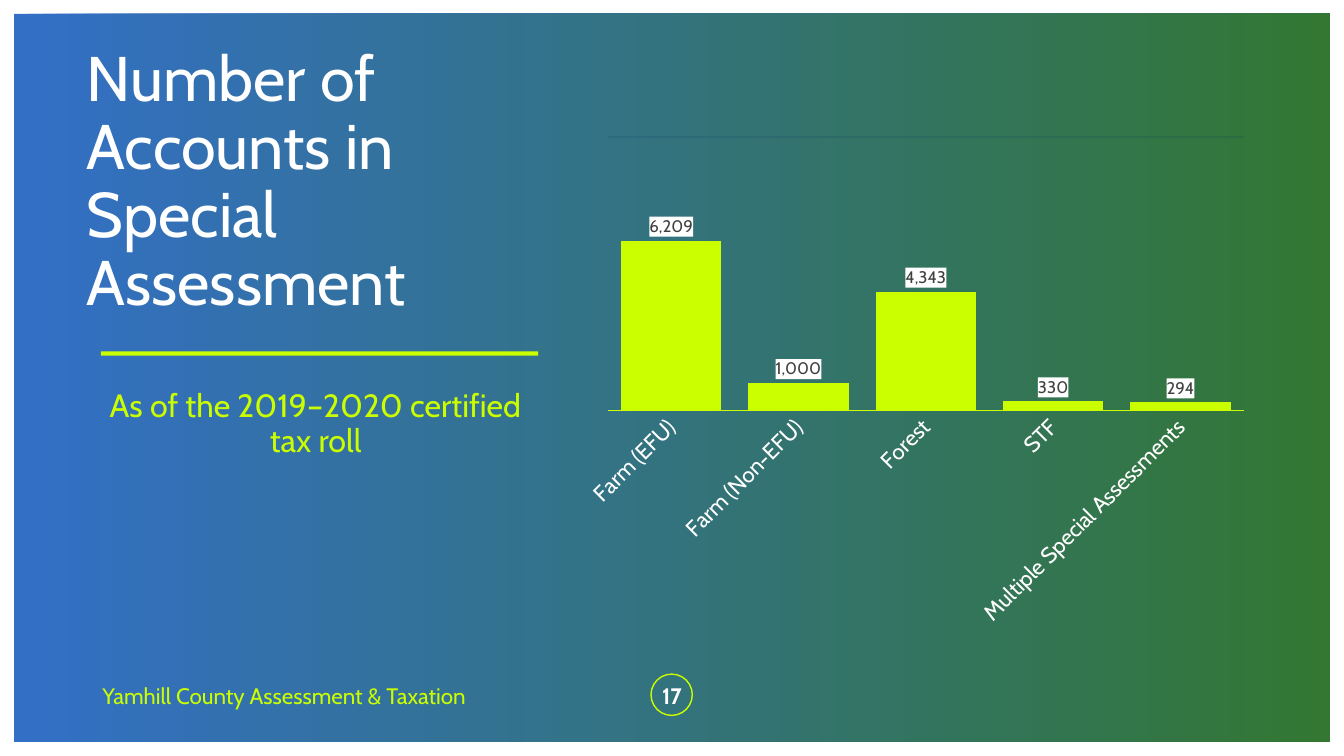
from dataclasses import dataclass

from lxml import etree
from pptx import Presentation
from pptx.chart.data import CategoryChartData
from pptx.dml.color import RGBColor
from pptx.enum.chart import XL_CHART_TYPE, XL_LABEL_POSITION, XL_TICK_MARK
from pptx.enum.shapes import MSO_SHAPE
from pptx.enum.text import MSO_ANCHOR, MSO_AUTO_SIZE, PP_ALIGN
from pptx.oxml import parse_xml
from pptx.oxml.ns import nsdecls, qn
from pptx.util import Pt

COLUMNS = XL_CHART_TYPE.COLUMN_CLUSTERED
OUTSIDE_END = XL_LABEL_POSITION.OUTSIDE_END
NO_TICK = XL_TICK_MARK.NONE
RECTANGLE, OVAL = MSO_SHAPE.RECTANGLE, MSO_SHAPE.OVAL
TOP, MIDDLE = MSO_ANCHOR.TOP, MSO_ANCHOR.MIDDLE
LEFT, CENTER = PP_ALIGN.LEFT, PP_ALIGN.CENTER
NO_AUTOFIT = MSO_AUTO_SIZE.NONE


@dataclass(frozen=True)
class Theme:
    font: str = "Cabin"
    white: str = "FFFFFF"
    lime: str = "CBFF00"
    blue: str = "004CB9"
    green: str = "005500"
    grid: str = "002E62"
    label: str = "404040"
    title_size: int = 45
    body_size: int = 23
    small_size: int = 16
    label_size: int = 12


THEME = Theme()
ACCOUNTS = {
    "Farm (EFU)": 6209,
    "Farm (Non-EFU)": 1000,
    "Forest": 4343,
    "STF": 330,
    "Multiple Special Assessments": 294,
}


def rgb(color):
    return RGBColor.from_string(color)


def style_font(font, size, color, bold=False):
    font.name = THEME.font
    font.size = Pt(size)
    font.bold = bold
    font.color.rgb = rgb(color)


def set_opacity(element, percent):
    for color in element.iter(qn("a:srgbClr")):
        alpha = etree.SubElement(color, qn("a:alpha"))
        alpha.set("val", str(percent * 1000))


def place(shape, left, top, width, height):
    shape.left, shape.top = Pt(left), Pt(top)
    shape.width, shape.height = Pt(width), Pt(height)


def add_plain_shape(page, kind, left, top, width, height):
    shape = page.shapes.add_shape(kind, Pt(left), Pt(top), Pt(width), Pt(height))
    shape.shadow.inherit = False
    shape.line.fill.background()
    shape.fill.background()
    return shape


def write(box, text, size, color, anchor=MIDDLE, align=LEFT, bold=False):
    frame = box.text_frame
    frame.text = text
    frame.word_wrap = True
    frame.auto_size = NO_AUTOFIT
    frame.vertical_anchor = anchor
    para = frame.paragraphs[0]
    para.alignment = align
    para.space_before = Pt(0)
    style_font(para.runs[0].font, size, color, bold)
    return para


def fill_placeholder(box, bounds, text, size, color, anchor, align):
    place(box, *bounds)
    frame = box.text_frame
    frame.margin_left = frame.margin_right = 0
    para = write(box, text, size, color, anchor, align)
    para.line_spacing = 0.9
    # No bullet and no hanging indent
    properties = para._p.get_or_add_pPr()
    properties.set("marL", "0")
    properties.set("indent", "0")
    properties.append(parse_xml(f"<a:buNone {nsdecls('a')}/>"))


def add_label(page, bounds, text, color, align=LEFT, bold=False):
    box = page.shapes.add_textbox(*(Pt(length) for length in bounds))
    write(box, text, THEME.small_size, color, MIDDLE, align, bold)


def add_backdrop(page):
    backdrop = add_plain_shape(page, RECTANGLE, 10, 10, 940, 520)
    backdrop.fill.gradient()
    backdrop.fill.gradient_angle = 0
    for stop, color in zip(backdrop.fill.gradient_stops, (THEME.blue, THEME.green)):
        stop.color.rgb = rgb(color)
    set_opacity(backdrop._element.spPr, 80)
    # Send behind the placeholders
    page.shapes._spTree.insert(2, backdrop._element)


def set_plot_area(chart, left, top, width, height):
    plot_area = chart._chartSpace.chart.plotArea
    for old in plot_area.findall(qn("c:layout")):
        plot_area.remove(old)
    plot_area.insert(0, parse_xml(
        f'<c:layout {nsdecls("c")}><c:manualLayout><c:layoutTarget val="inner"/>'
        '<c:xMode val="edge"/><c:yMode val="edge"/>'
        f'<c:x val="{left}"/><c:y val="{top}"/><c:w val="{width}"/><c:h val="{height}"/>'
        '</c:manualLayout></c:layout>'))


def style_axes(chart):
    categories = chart.category_axis
    categories.major_tick_mark = categories.minor_tick_mark = NO_TICK
    categories.format.line.color.rgb = rgb(THEME.lime)
    categories.format.line.width = Pt(1)
    style_font(categories.tick_labels.font, THEME.small_size, THEME.white)
    # Slant the category names upwards
    text_body = categories._element.find(qn("c:txPr")).find(qn("a:bodyPr"))
    text_body.set("rot", "-2700000")
    text_body.set("vert", "horz")

    values = chart.value_axis
    values.visible = False
    values.minimum_scale, values.maximum_scale = 0, 10000
    values.major_unit = 10000
    values.has_major_gridlines = True
    grid = values.major_gridlines.format.line
    grid.color.rgb = rgb(THEME.grid)
    grid.width = Pt(0.75)
    set_opacity(values._element.find(qn("c:majorGridlines")), 20)


def style_columns(plot):
    plot.gap_width, plot.overlap = 27, 5
    plot.vary_by_categories = False
    fill = plot.series[0].format.fill
    fill.solid()
    fill.fore_color.rgb = rgb(THEME.lime)
    plot.has_data_labels = True
    labels = plot.data_labels
    labels.show_value = True
    labels.position = OUTSIDE_END
    labels.number_format = "#,##0"
    labels.number_format_is_linked = False
    style_font(labels.font, THEME.label_size, THEME.label)
    # White plate behind each value
    labels._element.find(qn("c:txPr")).addprevious(parse_xml(
        f'<c:spPr {nsdecls("c", "a")}><a:solidFill><a:srgbClr val="{THEME.white}"/>'
        '</a:solidFill><a:ln><a:noFill/></a:ln></c:spPr>'))


def add_accounts_chart(page):
    data = CategoryChartData(number_format="#,##0")
    data.categories = list(ACCOUNTS)
    data.add_series("Series 1", list(ACCOUNTS.values()))
    chart = page.shapes.add_chart(
        COLUMNS, Pt(409.5), Pt(90.5), Pt(489), Pt(368.5), data).chart
    chart.has_legend = chart.has_title = False
    chart.font.name, chart.font.size = THEME.font, Pt(10)
    set_plot_area(chart, 0.05, 0.02, 0.93, 0.53)
    style_axes(chart)
    style_columns(chart.plots[0])


def main():
    deck = Presentation()
    deck.slide_width, deck.slide_height = Pt(960), Pt(540)
    page = deck.slides.add_slide(deck.slide_layouts[1])
    add_backdrop(page)

    # Title, accent rule and caption
    fill_placeholder(page.shapes.title, (62, 78.5, 343.5, 104.5),
                     "Number of Accounts in Special Assessment",
                     THEME.title_size, THEME.white, MIDDLE, LEFT)
    accent = add_plain_shape(page, RECTANGLE, 72, 251, 312.5, 3)
    accent.fill.solid()
    accent.fill.fore_color.rgb = rgb(THEME.lime)
    fill_placeholder(page.placeholders[1], (66, 275, 319, 177),
                     "As of the 2019–2020 certified tax roll",
                     THEME.body_size, THEME.lime, TOP, CENTER)

    add_accounts_chart(page)

    # Footer and ringed page number
    add_label(page, (66, 482, 276.5, 29), "Yamhill County Assessment & Taxation", THEME.lime)
    ring = add_plain_shape(page, OVAL, 465, 481.5, 29.5, 29.5)
    ring.line.color.rgb = rgb(THEME.lime)
    ring.line.width = Pt(1)
    add_label(page, (458.5, 482, 43, 29), "17", THEME.white, CENTER, bold=True)

    deck.save("out.pptx")


if __name__ == "__main__":
    main()
